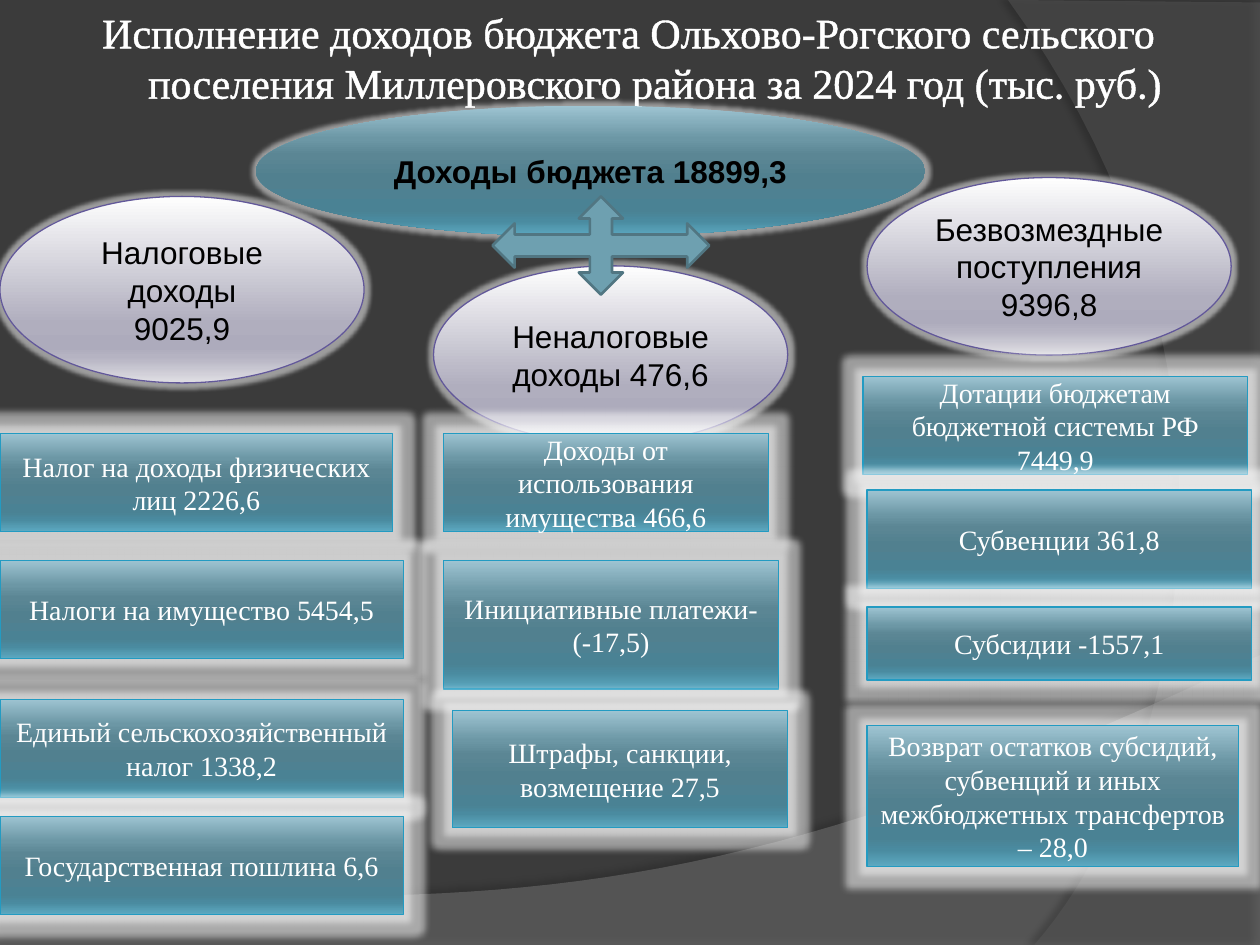
from dataclasses import dataclass

from lxml import etree
from pptx import Presentation
from pptx.dml.color import RGBColor
from pptx.enum.shapes import MSO_SHAPE
from pptx.enum.text import MSO_ANCHOR, PP_ALIGN
from pptx.oxml.ns import qn
from pptx.util import Cm, Pt

OVAL = MSO_SHAPE.OVAL
RECTANGLE = MSO_SHAPE.RECTANGLE
QUAD_ARROW = MSO_SHAPE.QUAD_ARROW
CENTER = PP_ALIGN.CENTER
MIDDLE, TOP = MSO_ANCHOR.MIDDLE, MSO_ANCHOR.TOP


@dataclass(frozen=True)
class Theme:
    background: str = "3B3B3B"
    light: str = "FFFFFF"
    dark: str = "000000"
    bottom_wave: str = "7F7F7F"
    side_wave: str = "5E5E5E"
    lilac_line: str = "625899"
    teal_line: str = "239BC2"
    arrow_fill: str = "6EA0B0"
    arrow_line: str = "517682"
    lilac: tuple = ((0, "FEFEFE"), (68, "B0AEBE"), (81, "ADABBC"),
                    (86, "B5B3C2"), (100, "E0DFE4"))
    teal: tuple = ((0, "9EC4D2"), (25, "6C97A5"), (38, "5B8694"), (55, "51808F"),
                   (80, "4A8294"), (88, "4A8BA0"), (100, "5DAAC2"))
    serif: str = "Times New Roman"
    sans: str = "Arial"
    title_size: int = 24
    group_size: int = 18
    item_size: int = 16


def add_color(parent, color, alpha=None):
    element = etree.SubElement(parent, qn("a:srgbClr"), val=color)
    if alpha is not None:
        etree.SubElement(element, qn("a:alpha"), val=str(alpha * 1000))


def add_effect(shape, name, color, alpha, **attributes):
    shape.shadow.inherit = False
    effects = shape._element.spPr.find(qn("a:effectLst"))
    values = {key: str(value) for key, value in attributes.items()}
    add_color(etree.SubElement(effects, qn(f"a:{name}"), values), color, alpha)


def curve_points(start, control_1, control_2, end, steps=40):
    """Points along a cubic Bezier curve, without its start."""
    for step in range(1, steps + 1):
        t = step / steps
        weights = ((1 - t) ** 3, 3 * t * (1 - t) ** 2, 3 * t * t * (1 - t), t ** 3)
        corners = (start, control_1, control_2, end)
        yield tuple(sum(w * corner[axis] for w, corner in zip(weights, corners))
                    for axis in (0, 1))


class BudgetSlide:
    """Holds the theme and the slide being drawn; lengths are in centimetres."""

    def __init__(self, presentation, theme):
        self.theme = theme
        self.slide = presentation.slides.add_slide(presentation.slide_layouts[1])
        fill = self.slide.background.fill
        fill.solid()
        fill.fore_color.rgb = RGBColor.from_string(theme.background)

    def wave(self, corners, curve, color, alpha, shadow_alpha, distance, direction):
        """Translucent backdrop of straight corners closed by a curve."""
        points = corners + list(curve_points(corners[-1], *curve))
        points = [(Cm(x), Cm(y)) for x, y in points]
        builder = self.slide.shapes.build_freeform(*points[0])
        builder.add_line_segments(points[1:], close=True)
        shape = builder.convert_to_shape()
        shape.line.fill.background()
        shape.fill.solid()
        shape.fill.fore_color.rgb = RGBColor.from_string(color)
        color_element = shape._element.spPr.find(qn("a:solidFill"))[0]
        etree.SubElement(color_element, qn("a:alpha"), val=str(alpha * 1000))
        add_effect(shape, "outerShdw", self.theme.dark, shadow_alpha, blurRad=Pt(4),
                   dist=Pt(distance), dir=direction * 60000)
        shape._element.getparent().insert(2, shape._element)

    def title(self, text, box):
        heading, body = self.slide.placeholders
        heading._element.getparent().remove(heading._element)
        body.left, body.top, body.width, body.height = map(Cm, box)
        frame = body.text_frame
        frame.vertical_anchor = TOP
        frame.text = text
        paragraph = frame.paragraphs[0]
        paragraph.alignment = CENTER
        paragraph.space_before = Pt(5)
        properties = paragraph._p.get_or_add_pPr()
        properties.set("marL", str(Cm(1.17)))
        properties.set("indent", str(Cm(-1.07)))
        etree.SubElement(properties, qn("a:buNone"))
        font = paragraph.runs[0].font
        self.style(font, self.theme.serif, self.theme.title_size, self.theme.light)
        outline = etree.Element(qn("a:ln"), w=str(Pt(1.45)))
        add_color(etree.SubElement(outline, qn("a:solidFill")), self.theme.light)
        paragraph.runs[0]._r.rPr.insert(0, outline)

    def style(self, font, name, size, color, bold=False):
        font.name = name
        font.size = Pt(size)
        font.bold = bold
        font.color.rgb = RGBColor.from_string(color)

    def shape(self, kind, box, line=None, line_width=0.75):
        shape = self.slide.shapes.add_shape(kind, *map(Cm, box))
        shape.shadow.inherit = False
        if line:
            shape.line.color.rgb = RGBColor.from_string(line)
            shape.line.width = Pt(line_width)
        else:
            shape.line.fill.background()
        return shape

    def gradient(self, shape, stops):
        shape.fill.gradient()
        shape.fill.gradient_angle = 270
        stop_list = shape._element.spPr.find(qn("a:gradFill")).find(qn("a:gsLst"))
        for stop in list(stop_list):
            stop_list.remove(stop)
        for position, color in stops:
            add_color(etree.SubElement(stop_list, qn("a:gs"), pos=str(position * 1000)), color)

    def label(self, shape, text, *font_style):
        frame = shape.text_frame
        frame.word_wrap = True
        frame.vertical_anchor = MIDDLE
        frame.text = text
        for paragraph in frame.paragraphs:
            paragraph.alignment = CENTER
            self.style(paragraph.font, *font_style)

    def group(self, text, box, stops, line=None, bold=False):
        theme = self.theme
        shape = self.shape(OVAL, box, line)
        self.gradient(shape, stops)
        add_effect(shape, "glow", theme.light, 50, rad=Pt(5))
        self.label(shape, text, theme.sans, theme.group_size, theme.dark, bold)

    def item(self, text, box):
        theme = self.theme
        shape = self.shape(RECTANGLE, box, theme.teal_line)
        self.gradient(shape, theme.teal)
        add_effect(shape, "glow", theme.light, 50, rad=Pt(8))
        self.label(shape, text, theme.serif, theme.item_size, theme.light)

    def arrow(self, box):
        shape = self.shape(QUAD_ARROW, box, self.theme.arrow_line, 1.5)
        shape.fill.solid()
        shape.fill.fore_color.rgb = RGBColor.from_string(self.theme.arrow_fill)


GROUPS = [
    ("Налоговые доходы\n9025,9", (0, 3.96, 7.34, 3.76)),
    ("Безвозмездные поступления 9396,8", (17.48, 3.58, 7.34, 3.58)),
    ("Неналоговые доходы 476,6", (8.74, 5.36, 7.14, 3.58)),
]
ITEMS = [
    ("Налог на доходы физических лиц 2226,6", (0, 8.74, 7.92, 1.98)),
    ("Налоги на имущество 5454,5", (0, 11.3, 8.13, 1.98)),
    ("Единый сельскохозяйственный налог 1338,2", (0, 14.1, 8.13, 1.98)),
    ("Государственная пошлина 6,6", (0, 16.46, 8.13, 1.98)),
    ("Доходы от использования имущества 466,6", (8.94, 8.74, 6.55, 1.98)),
    ("Инициативные платежи-(-17,5)", (8.94, 11.3, 6.76, 2.59)),
    ("Штрафы, санкции, возмещение 27,5", (9.12, 14.33, 6.76, 2.36)),
    ("Дотации бюджетам бюджетной системы РФ 7449,9", (17.4, 7.59, 7.75, 1.98)),
    ("Субвенции 361,8", (17.48, 9.88, 7.75, 1.98)),
    ("Субсидии -1557,1", (17.48, 12.24, 7.75, 1.47)),
    ("Возврат остатков субсидий, субвенций и иных межбюджетных трансфертов – 28,0",
     (17.48, 14.63, 7.49, 2.84)),
]


def main():
    theme = Theme()
    presentation = Presentation()
    presentation.slide_width, presentation.slide_height = Cm(25.4), Cm(19.05)
    budget = BudgetSlide(presentation, theme)
    budget.wave([(25.4, 0.05), (25.4, 19.05), (20.85, 19.05)],
                [(23.75, 15.72), (25.86, 7.62), (20.32, 0)], theme.side_wave, 40, 45, 4, 180)
    budget.wave([(0, 17.91), (0, 19.05), (25.4, 19.05), (25.4, 13.21)],
                [(14.2, 18.52), (9.93, 18.26), (0, 17.91)], theme.bottom_wave, 45, 35, 3.5, 270)
    budget.title("Исполнение доходов бюджета Ольхово-Рогского сельского поселения "
                 "Миллеровского района за 2024 год (тыс. руб.)", (1.19, 0, 22.86, 3.38))
    budget.group("Доходы бюджета 18899,3", (5.16, 2.13, 13.49, 2.64), theme.teal, bold=True)
    for text, box in GROUPS:
        budget.group(text, box, theme.lilac, theme.lilac_line)
    for text, box in ITEMS:
        budget.item(text, box)
    budget.arrow((9.93, 3.96, 4.37, 1.98))
    presentation.save("out.pptx")


if __name__ == "__main__":
    main()
